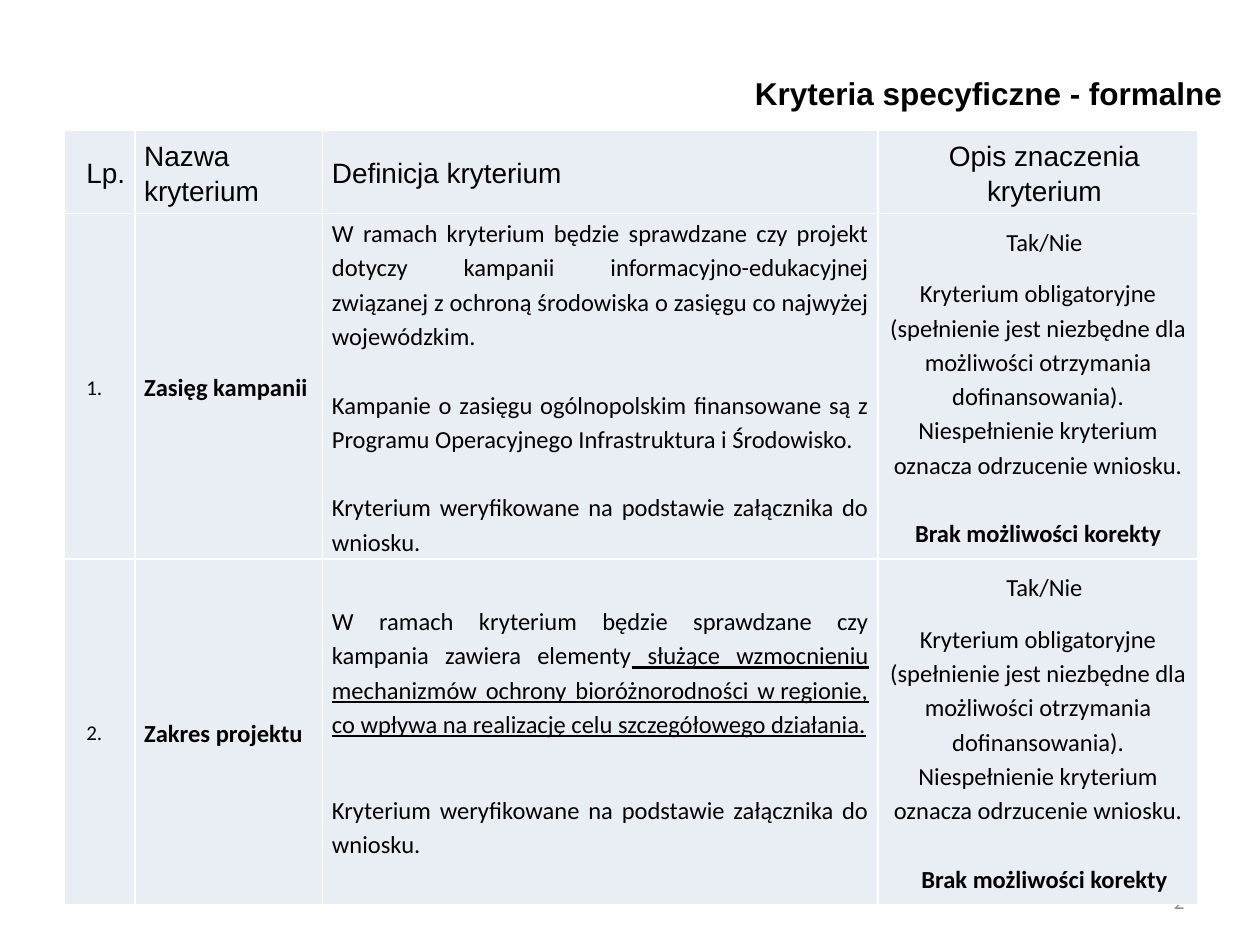
from lxml import etree
from pptx import Presentation, util as u
from pptx.dml.color import RGBColor
from pptx.enum import text
from pptx.oxml import ns

BLACK = RGBColor(0x00, 0x00, 0x00)
GREY = RGBColor(0x89, 0x89, 0x89)
WHITE = RGBColor(0xFF, 0xFF, 0xFF)
PALE_BLUE = RGBColor(0xE9, 0xED, 0xF4)

WIDTH, HEIGHT = u.Inches(10), u.Inches(7.5)
COLUMN_WIDTHS = (0.56, 1.49, 4.41, 2.54)
ROW_HEIGHTS = (0.66, 2.74, 2.74)
LINE_GAP = u.Pt(19.6)

LEFT, CENTER, RIGHT, JUSTIFY = (
    text.PP_ALIGN.LEFT, text.PP_ALIGN.CENTER, text.PP_ALIGN.RIGHT, text.PP_ALIGN.JUSTIFY)
HEADING = {"name": "Arial", "size": u.Pt(16)}
NUMBER = {"name": "Calibri", "size": u.Pt(12)}
BODY = {"name": "Calibri", "size": u.Pt(14)}
BOLD = {**BODY, "bold": True}
UNDERLINED = {**BODY, "underline": True}
TITLE = {"name": "Arial", "size": u.Pt(18), "bold": True}
PAGE = {**NUMBER, "color": GREY}

SPACED = {"line_spacing": 1.15}
AFTER = {**SPACED, "space_after": u.Pt(10)}
GAP = {**SPACED, "space_before": LINE_GAP}
INDENT = u.Inches(0.1)


def set_values(target, values):
    """Set every attribute named in a dict of format values."""
    for name, value in values.items():
        setattr(target, name, value)


def paragraph_data(words, font, align=LEFT, layout=SPACED, indent=0):
    """Describe a paragraph with a single run."""
    return [(words, font)], align, layout, indent


def write_paragraphs(frame, paragraphs):
    """Fill a text frame with described paragraphs."""
    for index, (runs, align, layout, indent) in enumerate(paragraphs):
        paragraph = frame.add_paragraph() if index else frame.paragraphs[0]
        set_values(paragraph, {"alignment": align, **layout})
        if indent:
            paragraph._p.get_or_add_pPr().set("marL", str(indent))
        for words, font in runs:
            run = paragraph.add_run()
            run.text = words
            values = dict(font)
            run.font.color.rgb = values.pop("color", BLACK)
            set_values(run.font, values)


def add_label(slide, box, words, font, anchor, wrap):
    """Place a right-aligned line of text in a box given as slide shares."""
    left, top, width, height = box
    shape = slide.shapes.add_textbox(
        int(left * WIDTH), int(top * HEIGHT), int(width * WIDTH), int(height * HEIGHT))
    set_values(shape.text_frame, {"word_wrap": wrap, "vertical_anchor": anchor})
    write_paragraphs(shape.text_frame, [paragraph_data(words, font, RIGHT, {})])


def add_borders(cell):
    """Draw a thin white line on each side of a cell."""
    properties = cell._tc.get_or_add_tcPr()
    for position, side in enumerate(("lnL", "lnR", "lnT", "lnB")):
        line = etree.Element(ns.qn(f"a:{side}"), w=str(u.Pt(1)))
        fill = etree.SubElement(line, ns.qn("a:solidFill"))
        etree.SubElement(fill, ns.qn("a:srgbClr"), val=str(WHITE))
        properties.insert(position, line)


def heading_row():
    """Return the heading cells."""
    return [
        [paragraph_data("Lp.", HEADING, LEFT, AFTER, INDENT)],
        [paragraph_data("Nazwa kryterium", HEADING)],
        [paragraph_data("Definicja kryterium", HEADING, JUSTIFY)],
        [paragraph_data("Opis znaczenia kryterium", HEADING, CENTER, AFTER, INDENT)],
    ]


def criterion_row(number, name, definition, closing_layout, closing_indent):
    """Return the cells of one criterion."""
    meaning = [
        paragraph_data("Tak/Nie", BODY, CENTER, AFTER, INDENT),
        paragraph_data("Kryterium obligatoryjne", BODY, CENTER),
        paragraph_data("(spełnienie jest niezbędne dla możliwości otrzymania "
                       "dofinansowania).", BODY, CENTER),
        paragraph_data("Niespełnienie kryterium oznacza odrzucenie wniosku.", BODY, CENTER),
        paragraph_data("Brak możliwości korekty", BOLD, CENTER, closing_layout, closing_indent),
    ]
    return [
        [paragraph_data(f"{number}.", NUMBER, LEFT, AFTER, INDENT)],
        [paragraph_data(name, BOLD)],
        definition,
        meaning,
    ]


def table_rows():
    """Return the whole content of the criteria table."""
    verification = "Kryterium weryfikowane na podstawie załącznika do wniosku."
    reach = [
        paragraph_data("W ramach kryterium będzie sprawdzane czy projekt dotyczy kampanii "
                       "informacyjno-edukacyjnej związanej z ochroną środowiska o zasięgu "
                       "co najwyżej wojewódzkim.", BODY, JUSTIFY),
        paragraph_data("Kampanie o zasięgu ogólnopolskim finansowane są z Programu "
                       "Operacyjnego Infrastruktura i Środowisko.", BODY, JUSTIFY, GAP),
        paragraph_data(verification, BODY, JUSTIFY, GAP),
    ]
    scope_runs = [
        ("W ramach kryterium będzie sprawdzane czy kampania zawiera elementy", BODY),
        (" służące wzmocnieniu mechanizmów ochrony bioróżnorodności w\u00a0regionie, "
         "co wpływa na realizację celu szczegółowego działania.", UNDERLINED),
    ]
    scope = [
        (scope_runs, JUSTIFY, SPACED, 0),
        paragraph_data(verification, BODY, JUSTIFY,
                       {**AFTER, "space_before": LINE_GAP + u.Pt(10)}),
    ]
    return [
        heading_row(),
        criterion_row(1, "Zasięg kampanii", reach, GAP, 0),
        criterion_row(2, "Zakres projektu", scope, {**GAP, **AFTER}, INDENT),
    ]


def add_criteria_table(slide, box, rows):
    """Place the criteria table in a box given as slide shares."""
    left, top, width, height = (
        int(share * side) for share, side in zip(box, (WIDTH, HEIGHT, WIDTH, HEIGHT)))
    table = slide.shapes.add_table(
        len(ROW_HEIGHTS), len(COLUMN_WIDTHS), left, top, width, height).table
    set_values(table, {"first_row": False, "horz_banding": False})
    for column, share in zip(table.columns, COLUMN_WIDTHS):
        column.width = int(width * share / sum(COLUMN_WIDTHS))
    for row, share in zip(table.rows, ROW_HEIGHTS):
        row.height = int(height * share / sum(ROW_HEIGHTS))
    margins = {"margin_left": u.Pt(5.4), "margin_right": u.Pt(5.4),
               "margin_top": 0, "margin_bottom": 0}
    for row, contents in zip(table.rows, rows):
        for cell, paragraphs in zip(row.cells, contents):
            set_values(cell, {**margins, "vertical_anchor": text.MSO_ANCHOR.MIDDLE})
            cell.fill.solid()
            cell.fill.fore_color.rgb = PALE_BLUE
            add_borders(cell)
            write_paragraphs(cell.text_frame, paragraphs)


def main():
    """Build and save the presentation."""
    presentation = Presentation()
    set_values(presentation, {"slide_width": WIDTH, "slide_height": HEIGHT})
    slide = presentation.slides.add_slide(presentation.slide_layouts[6])
    add_label(slide, (0.717, 0.927, 0.233, 0.053), "2", PAGE, text.MSO_ANCHOR.MIDDLE, True)
    add_label(slide, (0.57, 0.072, 0.41, 0.067), "Kryteria specyficzne - formalne",
              TITLE, text.MSO_ANCHOR.TOP, False)
    add_criteria_table(slide, (0.051, 0.138, 0.9, 0.819), table_rows())
    presentation.save("out.pptx")


if __name__ == "__main__":
    main()
